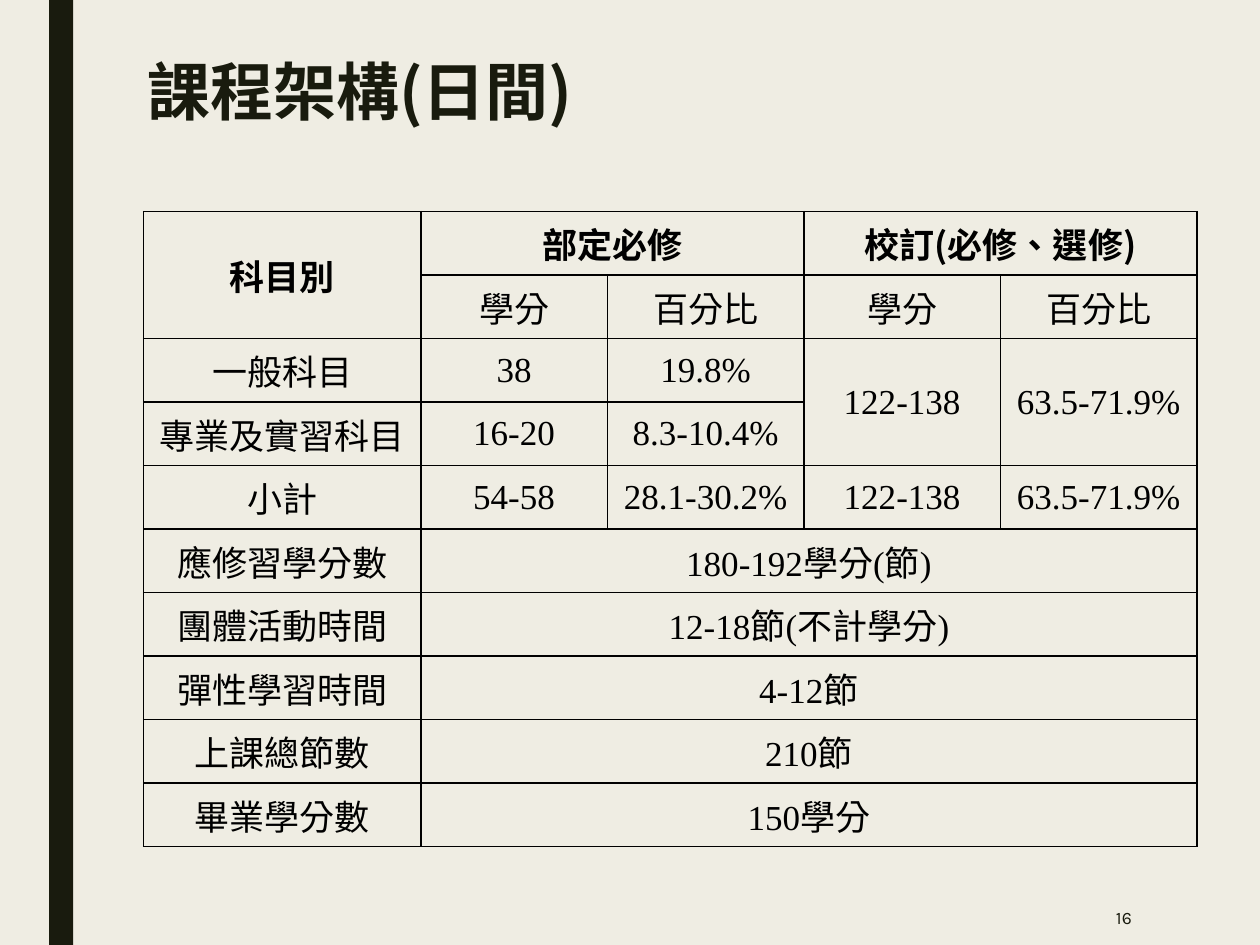
from typing import NamedTuple

from lxml.etree import SubElement
from pptx import Presentation
from pptx.dml.color import RGBColor
from pptx.enum.shapes import MSO_SHAPE as Shape
from pptx.enum.text import MSO_ANCHOR as Anchor, PP_ALIGN as Align
from pptx.oxml import parse_xml
from pptx.oxml.ns import nsdecls, qn
from pptx.util import Inches, Pt

CREAM = RGBColor(0xEF, 0xED, 0xE3)
DARK = RGBColor(0x19, 0x1B, 0x0E)
BLACK = RGBColor(0, 0, 0)
CJK = "Noto Sans CJK SC"
SERIF = "Times New Roman"
SANS = "Karla"
COLUMN_WIDTHS = (2.2, 1.48, 1.56, 1.56, 1.56)
TABLE_HEIGHT = 5.04


class Entry(NamedTuple):
    row: int
    column: int
    text: str
    rows: int = 1
    columns: int = 1
    font: str = CJK
    bold: bool = False


HEADINGS = [
    Entry(0, 0, "科目別", rows=2, bold=True),
    Entry(0, 1, "部定必修", columns=2, bold=True),
    Entry(0, 3, "校訂(必修、選修)", columns=2, bold=True),
    *(Entry(1, column, text) for column, text in enumerate(("學分", "百分比") * 2, 1)),
]
SUBJECTS = [
    ("一般科目", "38", "19.8%"),
    ("專業及實習科目", "16-20", "8.3-10.4%"),
    ("小計", "54-58", "28.1-30.2%"),
]
SCHOOL_VALUES = ("122-138", "63.5-71.9%")
TOTALS = [
    ("應修習學分數", "180-192學分(節)"),
    ("團體活動時間", "12-18節(不計學分)"),
    ("彈性學習時間", "4-12節"),
    ("上課總節數", "210節"),
    ("畢業學分數", "150學分"),
]


def course_entries() -> list[Entry]:
    entries = list(HEADINGS)
    for row, (subject, *values) in enumerate(SUBJECTS, 2):
        entries.append(Entry(row, 0, subject))
        entries += [Entry(row, column, text, font=SERIF)
                    for column, text in enumerate(values, 1)]
    for column, text in enumerate(SCHOOL_VALUES, 3):
        entries.append(Entry(2, column, text, rows=2, font=SERIF))
        entries.append(Entry(4, column, text, font=SERIF))
    for row, (label, total) in enumerate(TOTALS, 5):
        entries.append(Entry(row, 0, label))
        entries.append(Entry(row, 1, total, columns=4, font=SERIF))
    return entries


def write_text(frame, text: str, *, size: float, font: str = CJK,
               color: RGBColor = BLACK, bold: bool = False,
               align: Align = Align.LEFT, spacing: float = 1.0) -> None:
    para = frame.paragraphs[0]
    para.alignment = align
    para.line_spacing = spacing
    span = para.add_run()
    span.text = text
    span.font.size = Pt(size)
    span.font.bold = bold
    span.font.name = font
    span.font.color.rgb = color
    span.font._element.set("lang", "zh-TW")
    SubElement(span.font._element, qn("a:ea")).set("typeface", CJK)


def add_text_box(page, left: float, top: float, width: float, height: float,
                 text: str, *, anchor: Anchor = Anchor.TOP, **text_format) -> None:
    box = page.shapes.add_textbox(Inches(left), Inches(top), Inches(width), Inches(height))
    box.text_frame.word_wrap = True
    box.text_frame.vertical_anchor = anchor
    write_text(box.text_frame, text, **text_format)


def set_borders(cell) -> None:
    properties = cell._tc.get_or_add_tcPr()
    for index, side in enumerate(("lnL", "lnR", "lnT", "lnB")):
        properties.insert(index, parse_xml(
            f'<a:{side} {nsdecls("a")} w="{Pt(1)}"><a:solidFill>'
            f'<a:srgbClr val="{BLACK}"/></a:solidFill></a:{side}>'))


def add_course_table(page, left: float, top: float, entries: list[Entry]) -> None:
    row_count = max(entry.row for entry in entries) + 1
    table = page.shapes.add_table(
        row_count, len(COLUMN_WIDTHS), Inches(left), Inches(top),
        Inches(sum(COLUMN_WIDTHS)), Inches(TABLE_HEIGHT)).table
    table.first_row = table.horz_banding = False
    for column, width in zip(table.columns, COLUMN_WIDTHS):
        column.width = Inches(width)
    for row in table.rows:
        row.height = Inches(TABLE_HEIGHT / row_count)
    for cell in table.iter_cells():
        cell.fill.background()
        set_borders(cell)
    for entry in entries:
        cell = table.cell(entry.row, entry.column)
        if entry.rows > 1 or entry.columns > 1:
            cell.merge(table.cell(entry.row + entry.rows - 1,
                                  entry.column + entry.columns - 1))
        cell.vertical_anchor = Anchor.MIDDLE
        write_text(cell.text_frame, entry.text, size=20, font=entry.font,
                   bold=entry.bold, align=Align.CENTER)


def main() -> None:
    deck = Presentation()
    deck.slide_width, deck.slide_height = Inches(10), Inches(7.5)
    page = deck.slides.add_slide(deck.slide_layouts[6])
    page.background.fill.solid()
    page.background.fill.fore_color.rgb = CREAM

    stripe = page.shapes.add_shape(Shape.RECTANGLE, Inches(0.39), 0,
                                   Inches(0.19), deck.slide_height)
    stripe.shadow.inherit = False
    stripe.fill.solid()
    stripe.fill.fore_color.rgb = DARK
    stripe.line.fill.background()

    add_text_box(page, 1.07, 0.44, 4.63, 0.71, "課程架構(日間)",
                 size=36, color=DARK, bold=True, spacing=0.89)
    add_course_table(page, 1.14, 1.68, course_entries())
    add_text_box(page, 7.77, 7.06, 1.31, 0.44, "16", anchor=Anchor.MIDDLE,
                 size=10, font=SANS, color=DARK, align=Align.RIGHT)
    deck.save("out.pptx")


if __name__ == "__main__":
    main()
